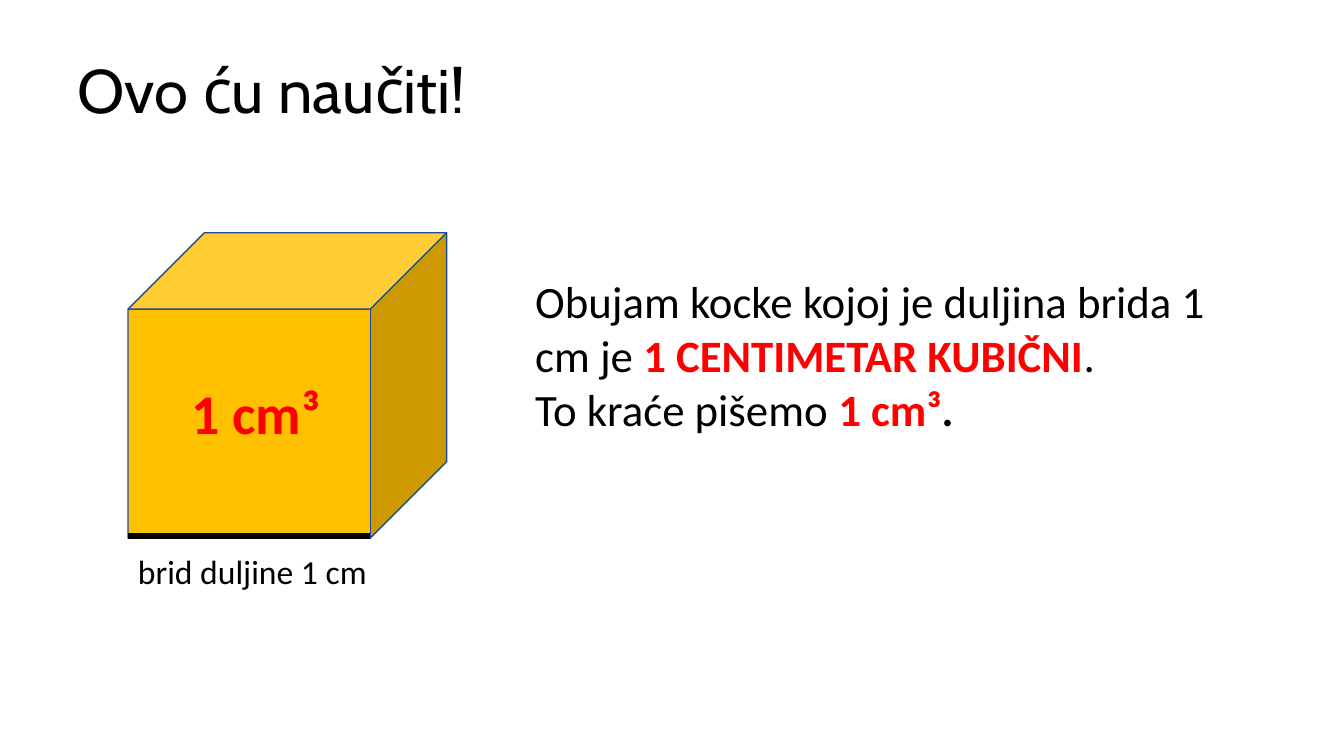
from pptx import Presentation
from pptx.dml.color import RGBColor
from pptx.enum import shapes, text
from pptx.util import Inches, Pt
from lxml import etree

BLACK = RGBColor(0x00, 0x00, 0x00)
RED = RGBColor(0xFF, 0x00, 0x00)
GOLD = RGBColor(0xFF, 0xC0, 0x00)
BLUE = RGBColor(0x1C, 0x4D, 0x9C)

# Content: paragraphs are lists of (text, colour, bold)
HEADING = "Ovo ću naučiti!"
EDGE_LABEL = [[("brid duljine 1 cm", BLACK, False)]]
VOLUME_LABEL = [[("1 cm³", RED, True)]]
DEFINITION = [
    [("Obujam kocke kojoj je duljina brida 1 cm je ", BLACK, False),
     ("1 CENTIMETAR KUBIČNI", RED, True),
     (".", BLACK, False)],
    [("To kraće\u00a0pišemo ", BLACK, False),
     ("1 cm³", RED, True),
     (".", BLACK, True)],
]

# Cube geometry in inches
CUBE_LEFT, CUBE_TOP, CUBE_WIDTH, CUBE_HEIGHT = 1.27, 2.31, 3.16, 3.03
DEPTH = 0.25
FRONT_RIGHT = CUBE_LEFT + CUBE_WIDTH - DEPTH * CUBE_HEIGHT
EDGE_Y = CUBE_TOP + CUBE_HEIGHT - 0.02


def format_run(run, size, colour, bold=False, font="Calibri"):
    run.font.name = font
    run.font.size = Pt(size)
    run.font.bold = bold
    run.font.color.rgb = colour


def add_text(slide, box, paragraphs, size):
    frame = slide.shapes.add_textbox(*map(Inches, box)).text_frame
    frame.word_wrap = True
    for index, pieces in enumerate(paragraphs):
        paragraph = frame.add_paragraph() if index else frame.paragraphs[0]
        for words, colour, bold in pieces:
            run = paragraph.add_run()
            run.text = words
            format_run(run, size, colour, bold)


def main():
    deck = Presentation()
    deck.slide_width, deck.slide_height = Inches(13.33), Inches(7.5)
    slide = deck.slides.add_slide(deck.slide_layouts[5])

    # Title
    title = slide.shapes.title
    title.left, title.top = Inches(0.67), Inches(0.3)
    title.width, title.height = Inches(12), Inches(1.25)
    title.text_frame.text = HEADING
    title.text_frame.vertical_anchor = text.MSO_ANCHOR.MIDDLE
    heading = title.text_frame.paragraphs[0]
    heading.alignment = text.PP_ALIGN.LEFT
    heading.line_spacing = 0.9
    format_run(heading.runs[0], 44, BLACK, font="Cabin")

    # Cube
    cube = slide.shapes.add_shape(
        shapes.MSO_SHAPE.CUBE, Inches(CUBE_LEFT), Inches(CUBE_TOP),
        Inches(CUBE_WIDTH), Inches(CUBE_HEIGHT))
    cube.adjustments[0] = DEPTH
    cube.shadow.inherit = False
    cube.fill.solid()
    cube.fill.fore_color.rgb = GOLD
    cube.line.color.rgb = BLUE
    cube.line.width = Pt(1)

    # Highlighted bottom edge
    edge = slide.shapes.add_connector(
        shapes.MSO_CONNECTOR.STRAIGHT, Inches(CUBE_LEFT), Inches(EDGE_Y),
        Inches(FRONT_RIGHT), Inches(EDGE_Y))
    edge.line.color.rgb = BLACK
    edge.line.width = Pt(4.5)
    etree.SubElement(
        edge._element.spPr,
        "{http://schemas.openxmlformats.org/drawingml/2006/main}effectLst")

    # Labels and definition
    add_text(slide, (CUBE_LEFT, 5.42, 3, 0.5), EDGE_LABEL, 24)
    add_text(slide, (1.8, 3.71, 3, 0.77), VOLUME_LABEL, 40)
    add_text(slide, (5.21, 2.67, 7.1, 1.72), DEFINITION, 32)

    deck.save("out.pptx")


if __name__ == "__main__":
    main()
